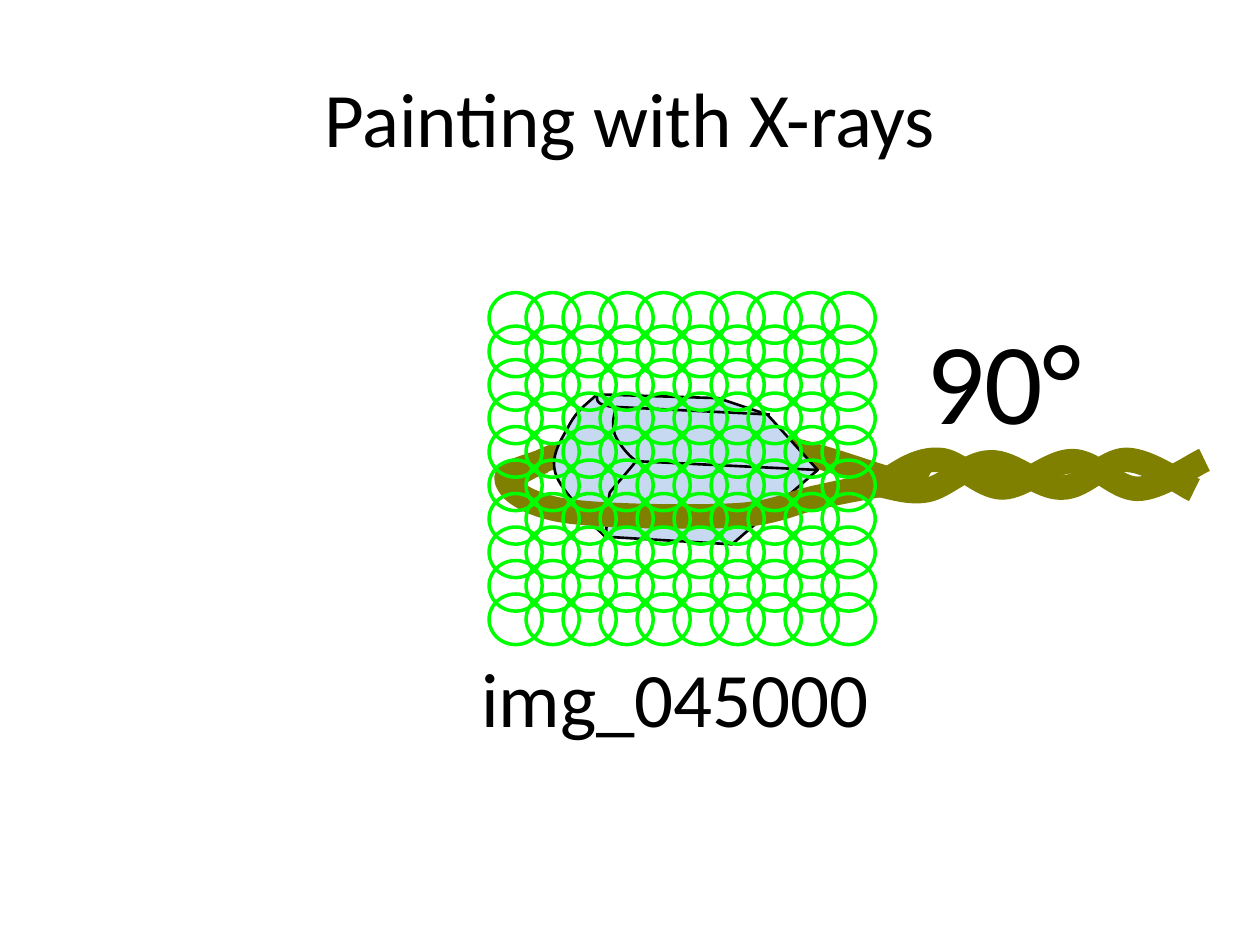
"""Build the slide on scanning a looped crystal with an X-ray beam grid."""
from lxml import etree
from pptx import Presentation
from pptx.dml.color import RGBColor
from pptx.enum.shapes import MSO_CONNECTOR, MSO_SHAPE
from pptx.enum.text import MSO_ANCHOR, MSO_AUTO_SIZE, PP_ALIGN
from pptx.oxml.ns import qn
from pptx.util import Cm, Pt

STRAIGHT = MSO_CONNECTOR.STRAIGHT
OVAL = MSO_SHAPE.OVAL
MIDDLE = MSO_ANCHOR.MIDDLE
FIT = MSO_AUTO_SIZE.SHAPE_TO_FIT_TEXT
LEFT, CENTER = PP_ALIGN.LEFT, PP_ALIGN.CENTER
INCH = 2.54
ROPE, CRYSTAL, EDGE, BEAM = "808000", "C6D9F1", "000000", "00FF00"


def paint(sp, line, width, fill=None):
    sp.shadow.inherit = False
    sp.line.color.rgb = RGBColor.from_string(line)
    sp.line.width = Pt(width)
    if fill:
        sp.fill.solid()
        sp.fill.fore_color.rgb = RGBColor.from_string(fill)
    else:
        sp.fill.background()


def write(tf, text, size=44, color="000000", font="Calibri", align=LEFT):
    p = tf.paragraphs[0]
    p.alignment = align
    r = p.add_run()
    r.text = text
    r.font.size = Pt(size)
    r.font.name = font
    r.font.color.rgb = RGBColor.from_string(color)


prs = Presentation()
prs.slide_width, prs.slide_height = Cm(25.4), Cm(19.05)
s = prs.slides.add_slide(prs.slide_layouts[5])

title = s.shapes.title
title.left, title.top, title.width, title.height = Cm(1.27), Cm(0.76), Cm(22.86), Cm(3.18)
title.text_frame.vertical_anchor = MIDDLE
write(title.text_frame, "Painting with X-rays", align=CENTER)

loop_back = [(7.24, 3.86), (6.71, 3.7), (6.42, 3.57), (5.99, 3.52), (5.56, 3.46),
             (5, 3.5), (4.67, 3.55), (4.34, 3.6), (4.15, 3.75), (4.02, 3.8)]
body = [(6.49, 3.73), (5.81, 4.32), (4.81, 4.26), (4.65, 4.12), (4.61, 3.78),
        (4.74, 3.13), (5.7, 3.16), (6.09, 3.29)]
middle_edge = [(6.49, 3.73), (5.04, 3.66)]
left_face = [(4.8, 4.26), (4.71, 4.14), (4.45, 3.9), (4.41, 3.76), (4.36, 3.61),
             (4.47, 3.47), (4.52, 3.37), (4.58, 3.26), (4.64, 3.22), (4.74, 3.13)]
lower_face = [(4.81, 4.25), (4.81, 4.23), (4.83, 3.94), (4.84, 3.91),
              (4.86, 3.88), (5.02, 3.7), (5.04, 3.67)]
upper_face = [(5.04, 3.65), (4.99, 3.62), (4.91, 3.52), (4.88, 3.45),
              (4.86, 3.38), (4.86, 3.34), (4.89, 3.23)]
loop_front = [(4.32, 3.66), (3.98, 3.76), (4, 3.78), (4.04, 3.85), (4.07, 3.91),
              (4.22, 4.02), (4.52, 4.06), (4.83, 4.1), (5.52, 4.11), (5.85, 4.09),
              (6.18, 4.07), (6.3, 3.98), (6.52, 3.94), (6.73, 3.89), (6.99, 3.85),
              (7.14, 3.82), (7.3, 3.79), (7.32, 3.8), (7.35, 3.82)]
strand_a = [(7, 3.84), (7.14, 3.74), (7.29, 3.64), (7.45, 3.65), (7.6, 3.65),
            (7.77, 3.86), (7.95, 3.87), (8.13, 3.87), (8.33, 3.66), (8.51, 3.66),
            (8.69, 3.66), (8.85, 3.88), (9.03, 3.88), (9.2, 3.88), (9.47, 3.69),
            (9.56, 3.65)]
strand_b = [(6.98, 3.85), (7.06, 3.86), (7.21, 3.92), (7.36, 3.89), (7.51, 3.86),
            (7.69, 3.67), (7.86, 3.67), (8.04, 3.66), (8.25, 3.88), (8.43, 3.87),
            (8.61, 3.87), (8.77, 3.65), (8.94, 3.65), (9.12, 3.65), (9.39, 3.85),
            (9.48, 3.89)]
top_edge = [(6.11, 3.29), (4.89, 3.23)]
top_face = [(4.91, 3.25), (4.89, 3.23), (4.78, 3.22), (4.76, 3.2),
            (4.73, 3.18), (4.74, 3.16), (4.74, 3.12)]

parts = [
    ("curve", loop_back, ROPE, 14, None),
    ("polygon", body, EDGE, 1.5, CRYSTAL),
    ("line", middle_edge, EDGE, 1.5, None),
    ("curve", left_face, EDGE, 1.5, CRYSTAL),
    ("curve", lower_face, EDGE, 1.5, CRYSTAL),
    ("curve", upper_face, EDGE, 1.5, CRYSTAL),
    ("curve", loop_front, ROPE, 14, None),
    ("curve", strand_a, ROPE, 14, None),
    ("curve", strand_b, ROPE, 14, None),
    ("line", top_edge, EDGE, 1.5, None),
    ("curve", top_face, EDGE, 1.5, CRYSTAL),
]
for kind, points, line, width, fill in parts:
    pts = [(Cm(x * INCH), Cm(y * INCH)) for x, y in points]
    if kind == "line":
        sp = s.shapes.add_connector(STRAIGHT, *pts[0], *pts[1])
        sp.line.color.rgb = RGBColor.from_string(line)
        sp.line.width = Pt(width)
        etree.SubElement(sp._element.spPr, qn("a:effectLst"))
        continue
    knots = pts[::3] if kind == "curve" else pts
    builder = s.shapes.build_freeform(*knots[0])
    builder.add_line_segments(knots[1:], close=kind == "polygon")
    sp = builder.convert_to_shape()
    paint(sp, line, width, fill)
    if kind == "curve":
        outline = next(sp._element.iter(qn("a:path")))
        for i, segment in enumerate(outline.findall(qn("a:lnTo"))):
            outline.remove(segment)
            curve = etree.SubElement(outline, qn("a:cubicBezTo"))
            for x, y in pts[3 * i + 1:3 * i + 4]:
                etree.SubElement(curve, qn("a:pt"), x=str(x - sp.left), y=str(y - sp.top))

grid = s.shapes.add_group_shape()
for row in range(10):
    for col in range(10):
        sp = grid.shapes.add_shape(OVAL, Cm(9.86 + 0.746 * col), Cm(5.9 + 0.675 * row),
                                   Cm(1.07), Cm(1.02))
        paint(sp, BEAM, 2)

for text, size, left, top, width, height in [
    ("90°", 66, 18.42, 6.1, 4.06, 3.07),
    ("img_045000", 44, 9.45, 12.98, 9.14, 2.13),
]:
    tf = s.shapes.add_textbox(Cm(left), Cm(top), Cm(width), Cm(height)).text_frame
    tf.word_wrap = False
    tf.auto_size = FIT
    write(tf, text, size=size)

prs.save("out.pptx")
